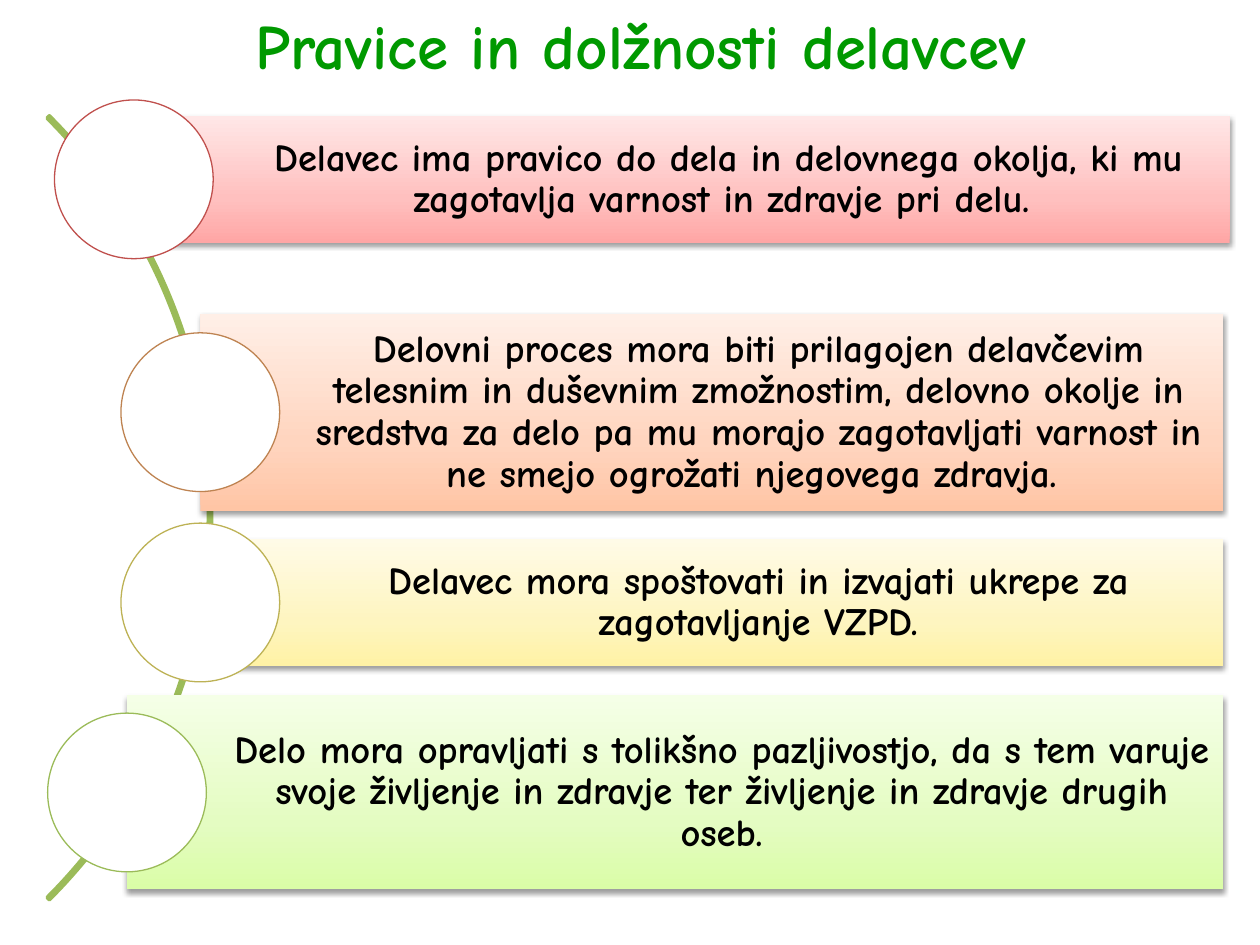
from copy import deepcopy

from lxml import etree
from pptx import Presentation
from pptx.dml.color import RGBColor
from pptx.enum.shapes import MSO_SHAPE
from pptx.enum.text import MSO_ANCHOR, MSO_AUTO_SIZE, PP_ALIGN
from pptx.oxml.ns import qn
from pptx.util import Pt

RECTANGLE, OVAL, BLOCK_ARC = MSO_SHAPE.RECTANGLE, MSO_SHAPE.OVAL, MSO_SHAPE.BLOCK_ARC
TOP, MIDDLE = MSO_ANCHOR.TOP, MSO_ANCHOR.MIDDLE
CENTER = PP_ALIGN.CENTER
NO_AUTOFIT = MSO_AUTO_SIZE.NONE

FONT = "Comic Neue"
TITLE_ONLY = 5
CIRCLE_SIZE = 90.7
COLORS = {
    "title": "009900",
    "text": "000000",
    "circle": "FFFFFF",
    "arc": "9BBB59",
    "shadow": "000000",
}

# Text, card box (left, top, width, height), gradient from bottom to top, circle outline
DUTIES = [
    ("Delavec ima pravico do dela in delovnega okolja, ki mu zagotavlja varnost "
     "in zdravje pri delu. ",
     (76.5, 66.2, 626.2, 72.6), ("FFA6A5", "FFC0BF", "FFE7E7"), "C0504D"),
    ("Delovni proces mora biti prilagojen delavčevim telesnim in duševnim "
     "zmožnostim, delovno okolje in sredstva za delo pa mu morajo zagotavljati "
     "varnost in ne smejo ogrožati njegovega zdravja. ",
     (114.5, 179.3, 584.5, 112.5), ("FFC5A5", "FFD5BF", "FFEFE7"), "BE8351"),
    ("Delavec mora spoštovati in izvajati ukrepe za zagotavljanje VZPD.",
     (114.5, 308, 584.5, 72.6), ("FFF2A5", "FEF5C0", "FFFBE7"), "BDB255"),
    ("Delo mora opravljati s tolikšno pazljivostjo, da s tem varuje svoje "
     "življenje in zdravje ter življenje in zdravje drugih oseb.",
     (72.6, 397.4, 626.4, 110.9), ("DAFDA7", "E4FCC2", "F5FFE7"), "9BBB59"),
]


def rgb(color):
    """Turn a hex string into a colour."""
    return RGBColor.from_string(color)


def write_text(frame, text, size, color, anchor, insets):
    """Fill a text frame with one centred bold paragraph and return it."""
    frame.word_wrap = True
    frame.auto_size = NO_AUTOFIT
    frame.vertical_anchor = anchor
    (frame.margin_left, frame.margin_top,
     frame.margin_right, frame.margin_bottom) = map(Pt, insets)
    paragraph = frame.paragraphs[0]
    paragraph.alignment = CENTER
    run = paragraph.add_run()
    run.text = text
    run.font.name = FONT
    run.font.size = Pt(size)
    run.font.bold = True
    run.font.color.rgb = rgb(color)
    return paragraph


def add_title(slide, text):
    """Place the title across the top of the slide."""
    title = slide.shapes.title
    title.left, title.top, title.width, title.height = map(Pt, (25.2, 0, 694.8, 60))
    paragraph = write_text(title.text_frame, text, 36, COLORS["title"], TOP,
                           (7.2, 3.6, 7.2, 3.6))
    paragraph.space_before = Pt(7.2)


def add_plain_shape(slide, kind, box):
    """Add a preset shape without a shadow."""
    shape = slide.shapes.add_shape(kind, *map(Pt, box))
    shape.shadow.inherit = False
    return shape


def set_outline(shape, color, width):
    """Give a shape a solid outline."""
    shape.line.color.rgb = rgb(color)
    shape.line.width = Pt(width)


def set_gradient(shape, colors):
    """Fill a shape with a three-colour gradient running upwards."""
    shape.fill.gradient()
    shape.fill.gradient_angle = 90
    stop_list = shape._element.spPr.find(".//" + qn("a:gsLst"))
    stop_list.insert(1, deepcopy(stop_list[0]))
    for stop, position, color in zip(shape.fill.gradient_stops, (0, 0.35, 1), colors):
        stop.position = position
        stop.color.rgb = rgb(color)


def set_shadow(shape):
    """Add a soft shadow straight below a shape."""
    effects = shape._element.spPr.find(qn("a:effectLst"))
    shadow = etree.SubElement(effects, qn("a:outerShdw"), blurRad=str(Pt(3.1)),
                              dist=str(Pt(1.6)), dir="5400000", rotWithShape="0")
    color = etree.SubElement(shadow, qn("a:srgbClr"), val=COLORS["shadow"])
    etree.SubElement(color, qn("a:alpha"), val="38000")


def add_arc(slide):
    """Draw the thin arc that links the circles."""
    arc = add_plain_shape(slide, BLOCK_ARC, (-512.6, -26.6, 633.6, 633.6))
    for index, value in enumerate((189, 27, 0.003)):
        arc.adjustments[index] = value
    arc.fill.background()
    set_outline(arc, COLORS["arc"], 2)


def add_duty(slide, text, box, gradient, outline):
    """Add a text card with a circle centred on its left edge."""
    card = add_plain_shape(slide, RECTANGLE, box)
    set_gradient(card, gradient)
    set_shadow(card)
    card.line.fill.background()
    paragraph = write_text(card.text_frame, text, 22, COLORS["text"], MIDDLE,
                           (57.6, 4.4, 4.4, 4.4))
    paragraph.line_spacing = 0.9

    left, top, _, height = box
    circle = add_plain_shape(slide, OVAL, (
        left - CIRCLE_SIZE / 2, top + (height - CIRCLE_SIZE) / 2,
        CIRCLE_SIZE, CIRCLE_SIZE))
    circle.fill.solid()
    circle.fill.fore_color.rgb = rgb(COLORS["circle"])
    set_outline(circle, outline, 0.75)


def main():
    """Build the slide and save it."""
    presentation = Presentation()
    presentation.slide_width, presentation.slide_height = Pt(720), Pt(540)
    slide = presentation.slides.add_slide(presentation.slide_layouts[TITLE_ONLY])
    add_title(slide, "Pravice in dolžnosti delavcev ")
    add_arc(slide)
    for duty in DUTIES:
        add_duty(slide, *duty)
    presentation.save("out.pptx")


main()
